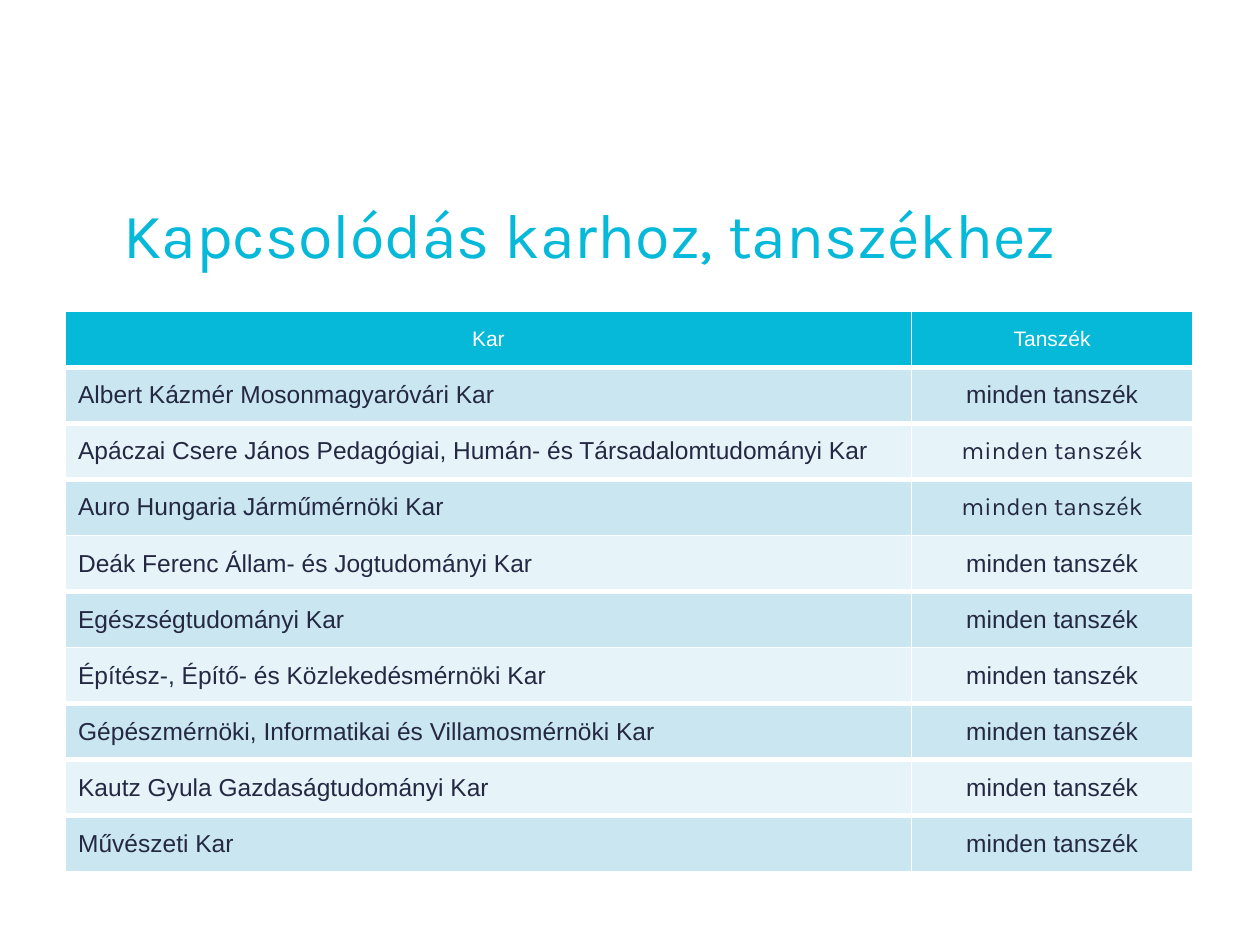
from dataclasses import dataclass

from lxml.etree import SubElement
from pptx import Presentation
from pptx.dml.color import RGBColor
from pptx.enum.text import MSO_ANCHOR as Anchor, PP_ALIGN as Align
from pptx.oxml.ns import qn
from pptx.util import Inches, Pt


@dataclass(frozen=True)
class Theme:
    """Colours, fonts and type sizes of the slide."""
    accent: str = "07B9D9"
    ink: str = "242843"
    white: str = "FFFFFF"
    dark_band: str = "CAE6F1"
    light_band: str = "E6F3F8"
    heading_font: str = "Karla"
    body_font: str = "Arial"
    title_size: int = 36
    header_size: int = 12
    body_size: int = 14
    thin: int = 1
    thick: int = 3


THEME = Theme()
TITLE = "Kapcsolódás karhoz, tanszékhez"
HEADER = ("Kar", "Tanszék")
DEPARTMENTS = "minden tanszék"
FACULTIES = (
    "Albert Kázmér Mosonmagyaróvári Kar",
    "Apáczai Csere János Pedagógiai, Humán- és Társadalomtudományi Kar",
    "Auro Hungaria Járműmérnöki Kar",
    "Deák Ferenc Állam- és Jogtudományi Kar",
    "Egészségtudományi Kar",
    "Építész-, Építő- és Közlekedésmérnöki Kar",
    "Gépészmérnöki, Informatikai és Villamosmérnöki Kar",
    "Kautz Gyula Gazdaságtudományi Kar",
    "Művészeti Kar",
)
COLUMN_SHARES = (0.75, 0.25)
KARLA_ROWS = (2, 3)
THIN_BELOW = (3, 5, 9)


def write(para, text, font, size, colour, align=Align.LEFT):
    """Put one formatted span of text into a paragraph."""
    para.alignment = align
    span = para.add_run()
    span.text = text
    for name, value in {"name": font, "size": Pt(size)}.items():
        setattr(span.font, name, value)
    span.font.color.rgb = RGBColor.from_string(colour)


def add_border(cell, widths):
    """Draw white cell edges with the given widths in points."""
    properties = cell._tc.get_or_add_tcPr()
    for position, (edge, width) in enumerate(widths.items()):
        line = SubElement(properties, qn(f"a:{edge}"), w=str(Pt(width)))
        fill = SubElement(line, qn("a:solidFill"))
        SubElement(fill, qn("a:srgbClr"), val=THEME.white)
        properties.insert(position, line)


def add_title(page, left, top, width, height):
    """Place the slide title in its box."""
    box = page.shapes.add_textbox(left, top, width, height)
    box.text_frame.word_wrap = True
    para = box.text_frame.paragraphs[0]
    para.line_spacing = 0.9
    write(para, TITLE, THEME.heading_font, THEME.title_size, THEME.accent)


def edge_below(row):
    """Return the width of the line under a row."""
    return THEME.thin if row in THIN_BELOW else THEME.thick


def add_faculty_table(page, left, top, width, height):
    """Place the table of faculties and departments in its box."""
    rows = [HEADER] + [(faculty, DEPARTMENTS) for faculty in FACULTIES]
    table = page.shapes.add_table(
        len(rows), len(HEADER), left, top, width, height).table
    for column, share in zip(table.columns, COLUMN_SHARES):
        column.width = int(width * share)
    for row, texts in enumerate(rows):
        is_header = row == 0
        band = THEME.dark_band if row % 2 else THEME.light_band
        widths = {"lnL": THEME.thin, "lnR": THEME.thin,
                  "lnT": THEME.thin if is_header else edge_below(row - 1),
                  "lnB": edge_below(row)}
        for column, text in enumerate(texts):
            cell = table.cell(row, column)
            cell.vertical_anchor = Anchor.MIDDLE
            cell.fill.solid()
            cell.fill.fore_color.rgb = RGBColor.from_string(
                THEME.accent if is_header else band)
            add_border(cell, widths)
            is_karla = column == 1 and row in KARLA_ROWS
            write(cell.text_frame.paragraphs[0], text,
                  THEME.heading_font if is_karla else THEME.body_font,
                  THEME.header_size if is_header else THEME.body_size,
                  THEME.white if is_header else THEME.ink,
                  Align.CENTER if is_header or column else Align.LEFT)


def main():
    """Build the slide and save the deck."""
    deck = Presentation()
    deck.slide_width, deck.slide_height = Inches(10), Inches(7.5)
    page = deck.slides.add_slide(deck.slide_layouts[6])
    add_faculty_table(page, Inches(0.52), Inches(2.47),
                      Inches(8.95), Inches(4.45))
    add_title(page, Inches(0.88), Inches(1.57), Inches(8.36), Inches(0.6))
    deck.save("out.pptx")


if __name__ == "__main__":
    main()
